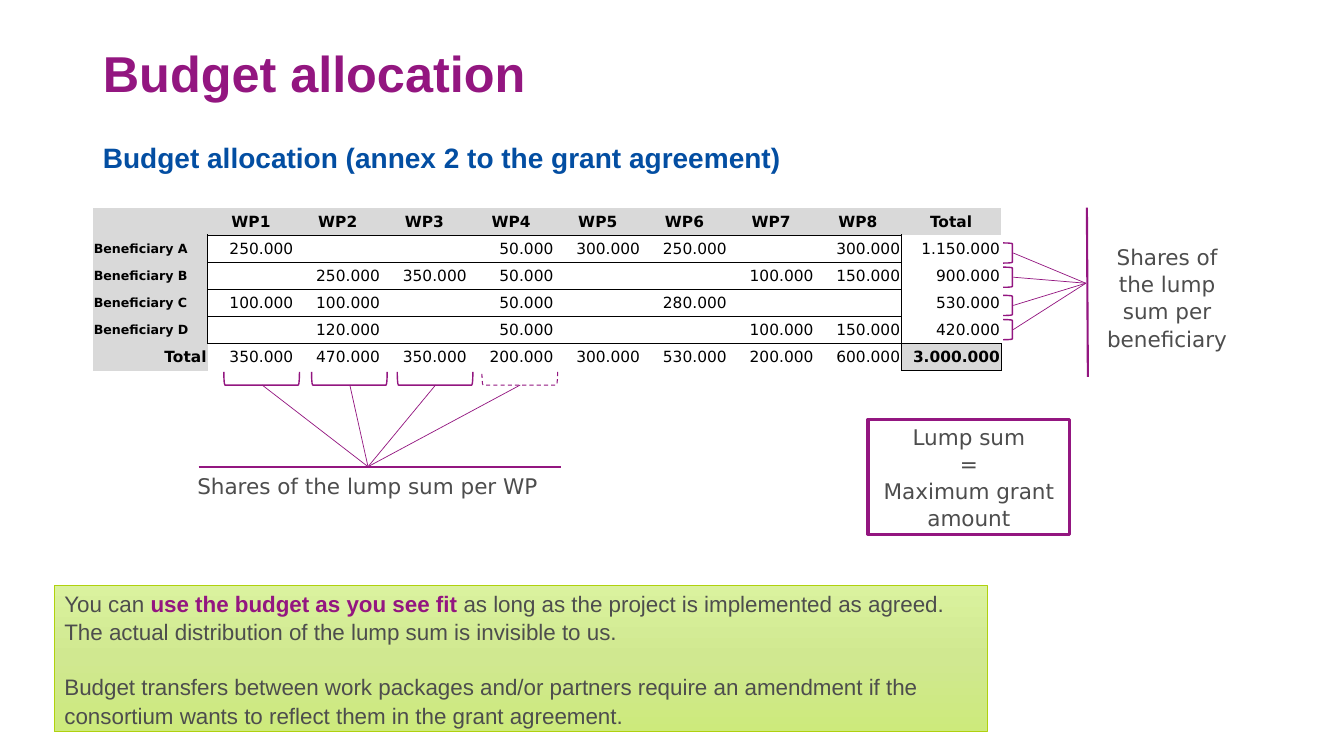
from copy import deepcopy
from dataclasses import dataclass
from lxml.etree import SubElement
from pptx import Presentation
from pptx.dml.color import RGBColor
from pptx.enum.dml import MSO_LINE
from pptx.enum.shapes import MSO_CONNECTOR, MSO_SHAPE
from pptx.enum.text import MSO_ANCHOR, MSO_AUTO_SIZE, PP_ALIGN
from pptx.oxml.ns import qn
from pptx.util import Inches, Pt


@dataclass(frozen=True)
class Theme:
    plum: str = "931680"
    blue: str = "034EA2"
    text: str = "4D4D4D"
    black: str = "000000"
    white: str = "FFFFFF"
    grey: str = "D9D9D9"
    green: str = "B0D10E"
    blend: tuple = ((0, "DAF29E"), (0.5, "D0E890"), (1, "CDEA7C"))
    sans: str = "Arial"
    wide: str = "DejaVu Sans"
    title: float = 36
    head: float = 20
    note: float = 16
    label: float = 15.4
    cell: float = 11
    name: float = 9
    space: float = 1.05


THEME = Theme()
TITLE = "Budget allocation"
HEAD = "Budget allocation (annex 2 to the grant agreement)"
BUDGET = [
    ["", "WP1", "WP2", "WP3", "WP4", "WP5", "WP6", "WP7", "WP8", "Total"],
    ["Beneficiary A", "250.000", "", "", "50.000", "300.000", "250.000", "", "300.000", "1.150.000"],
    ["Beneficiary B", "", "250.000", "350.000", "50.000", "", "", "100.000", "150.000", "900.000"],
    ["Beneficiary C", "100.000", "100.000", "", "50.000", "", "280.000", "", "", "530.000"],
    ["Beneficiary D", "", "120.000", "", "50.000", "", "", "100.000", "150.000", "420.000"],
    ["Total", "350.000", "470.000", "350.000", "200.000", "300.000", "530.000", "200.000", "600.000", "3.000.000"],
]
WIDTHS = [1.14] + [0.86] * 8 + [0.99]
ROW = 0.27
PACKS = [2.6, 3.47, 4.32, 5.16]
SHARES = [2.51, 2.75, 3.03, 3.27]
PACK_TIP = (3.65, 4.63)
SHARE_TIP = (10.77, 2.81)
PACK_TEXT = ["Shares of the lump sum per WP"]
SHARE_TEXT = ["Shares of the lump sum per beneficiary"]
SUM_TEXT = ["Lump sum", "=", "Maximum grant amount"]
NOTE = [
    [("You can ", False), ("use the budget as you see fit ", True),
     ("as long as the project is implemented as agreed. The actual distribution of the lump sum is invisible to us.", False)],
    [("Budget transfers between work packages and/or partners require an amendment if the consortium wants to reflect them in the grant agreement.", False)],
]


def tint(code):
    return RGBColor.from_string(code)


def style(run, face, size, color, bold=False):
    run.font.name, run.font.size, run.font.bold = face, Pt(size), bold
    run.font.color.rgb = tint(color)


def place(shape, *box):
    shape.left, shape.top, shape.width, shape.height = map(Inches, box)


def draw(slide, kind, box, edge, weight, fill=THEME.white):
    shape = slide.shapes.add_shape(kind, *map(Inches, box))
    shape.shadow.inherit = False
    if fill:
        shape.fill.solid()
        shape.fill.fore_color.rgb = tint(fill)
    else:
        shape.fill.background()
    shape.line.color.rgb = tint(edge)
    shape.line.width = Pt(weight)
    return shape


def link(slide, start, end, weight):
    line = slide.shapes.add_connector(MSO_CONNECTOR.STRAIGHT, *map(Inches, start + end))
    line.line.color.rgb = tint(THEME.plum)
    line.line.width = Pt(weight)
    SubElement(line._element.spPr, qn("a:effectLst"))


def label(shape, lines):
    frame = shape.text_frame
    frame.word_wrap = True
    frame.text = "\n".join(lines)
    for para in frame.paragraphs:
        para.alignment = PP_ALIGN.CENTER
        para.line_spacing = THEME.space
        style(para.runs[0], THEME.wide, THEME.label, THEME.text)


def caption(slide, box, lines):
    label(slide.shapes.add_textbox(*map(Inches, box)), lines)


def add_heads(slide):
    title, body = slide.placeholders
    place(title, 0.92, 0.51, 11.5, 0.52)
    place(body, 0.92, 1.33, 11.5, 4.41)
    for shape, words, size, color in (
        (title, TITLE, THEME.title, THEME.plum),
        (body, HEAD, THEME.head, THEME.blue),
    ):
        frame = shape.text_frame
        frame.text = words
        frame.auto_size = MSO_AUTO_SIZE.NONE
        para = frame.paragraphs[0]
        props = para._p.get_or_add_pPr()
        props.set("marL", "0")
        props.set("indent", "0")
        SubElement(props, qn("a:buNone"))
        para.alignment = PP_ALIGN.LEFT
        para.space_before = Pt(0)
        style(para.runs[0], THEME.sans, size, color, True)
    title.text_frame.vertical_anchor = MSO_ANCHOR.BOTTOM
    title.text_frame.margin_bottom = 0
    title.text_frame.paragraphs[0].line_spacing = 0.9
    body.text_frame.paragraphs[0].line_spacing = THEME.space


def level(row, col):
    return (1 <= row <= 5 and 1 <= col <= 8) or (col == 9 and row in (5, 6))


def upright(row, col):
    return (1 <= row <= 4 and col in (1, 9)) or (row == 5 and col in (9, 10))


def border(cell, row, col):
    props = cell._tc.get_or_add_tcPr()
    for side, shown in (
        ("L", upright(row, col)), ("R", upright(row, col + 1)),
        ("T", level(row, col)), ("B", level(row + 1, col)),
    ):
        edge = SubElement(props, qn("a:ln" + side), w=str(Pt(0.5)))
        if shown:
            SubElement(SubElement(edge, qn("a:solidFill")), qn("a:srgbClr"), val=THEME.black)
        else:
            SubElement(edge, qn("a:noFill"))


def add_budget(slide):
    rows, cols = len(BUDGET), len(WIDTHS)
    box = (0.92, 2.06, sum(WIDTHS), rows * ROW)
    table = slide.shapes.add_table(rows, cols, *map(Inches, box)).table
    for col, width in enumerate(WIDTHS):
        table.columns[col].width = Inches(width)
    for row, line in enumerate(BUDGET):
        table.rows[row].height = Inches(ROW)
        for col, words in enumerate(line):
            cell = table.cell(row, col)
            border(cell, row, col)
            shaded = row == 0 or col == 0 or (row == 5 and col == 9)
            cell.fill.solid()
            cell.fill.fore_color.rgb = tint(THEME.grey if shaded else THEME.white)
            cell.vertical_anchor = MSO_ANCHOR.MIDDLE
            cell.margin_left = cell.margin_right = cell.margin_top = Inches(0.01)
            cell.margin_bottom = 0
            name = col == 0 and 1 <= row <= 4
            para = cell.text_frame.paragraphs[0]
            para.alignment = PP_ALIGN.CENTER if row == 0 else PP_ALIGN.LEFT if name else PP_ALIGN.RIGHT
            if words:
                para.text = words
                style(para.runs[0], THEME.wide, THEME.name if name else THEME.cell, THEME.black, shaded)
            else:
                SubElement(para._p, qn("a:endParaRPr"), sz=str(THEME.cell * 100))


def add_shares(slide):
    for mid in PACKS:
        last = mid == PACKS[-1]
        brace = draw(slide, MSO_SHAPE.LEFT_BRACKET, (mid - 0.07, 3.38, 0.13, 0.75),
                     THEME.plum, 0.75 if last else 1, None if last else THEME.white)
        brace.rotation = 270
        if last:
            brace.line.dash_style = MSO_LINE.DASH
        link(slide, (mid, 3.82), PACK_TIP, 0.5)
    for mid in SHARES:
        brace = draw(slide, MSO_SHAPE.LEFT_BRACKET, (9.95, mid - 0.1, 0.09, 0.2), THEME.plum, 1)
        brace.rotation = 180
        link(slide, (10.05, mid), SHARE_TIP, 0.5)
    link(slide, (1.97, 4.63), (5.56, 4.63), 1.5)
    link(slide, (10.78, 2.06), (10.79, 3.74), 1.5)
    caption(slide, (1.26, 4.63, 4.77, 0.36), PACK_TEXT)
    caption(slide, (10.85, 2.36, 1.45, 1.14), SHARE_TEXT)
    label(draw(slide, MSO_SHAPE.RECTANGLE, (8.61, 4.16, 2, 1.14), THEME.plum, 2.25), SUM_TEXT)


def add_note(slide):
    panel = draw(slide, MSO_SHAPE.RECTANGLE, (0.54, 5.81, 9.25, 1.45), THEME.green, 0.5)
    panel.fill.gradient()
    panel.fill.gradient_angle = 270
    stops = panel._element.spPr.find(".//" + qn("a:gsLst"))
    stops.append(deepcopy(stops[0]))
    for stop, (place_at, color) in zip(panel.fill.gradient_stops, THEME.blend):
        stop.position = place_at
        stop.color.rgb = tint(color)
    frame = panel.text_frame
    frame.word_wrap = True
    for turn, parts in enumerate(NOTE):
        para = frame.add_paragraph() if turn else frame.paragraphs[0]
        para.alignment = PP_ALIGN.LEFT
        para.line_spacing = THEME.space
        para.space_before = Pt(19.3 if turn else 0)
        for words, strong in parts:
            run = para.add_run()
            run.text = words
            style(run, THEME.sans, THEME.note, THEME.plum if strong else THEME.text, strong)


def main():
    deck = Presentation()
    deck.slide_width, deck.slide_height = Inches(13.33), Inches(7.5)
    slide = deck.slides.add_slide(deck.slide_layouts[1])
    for build in (add_heads, add_budget, add_shares, add_note):
        build(slide)
    deck.save("out.pptx")


if __name__ == "__main__":
    main()
